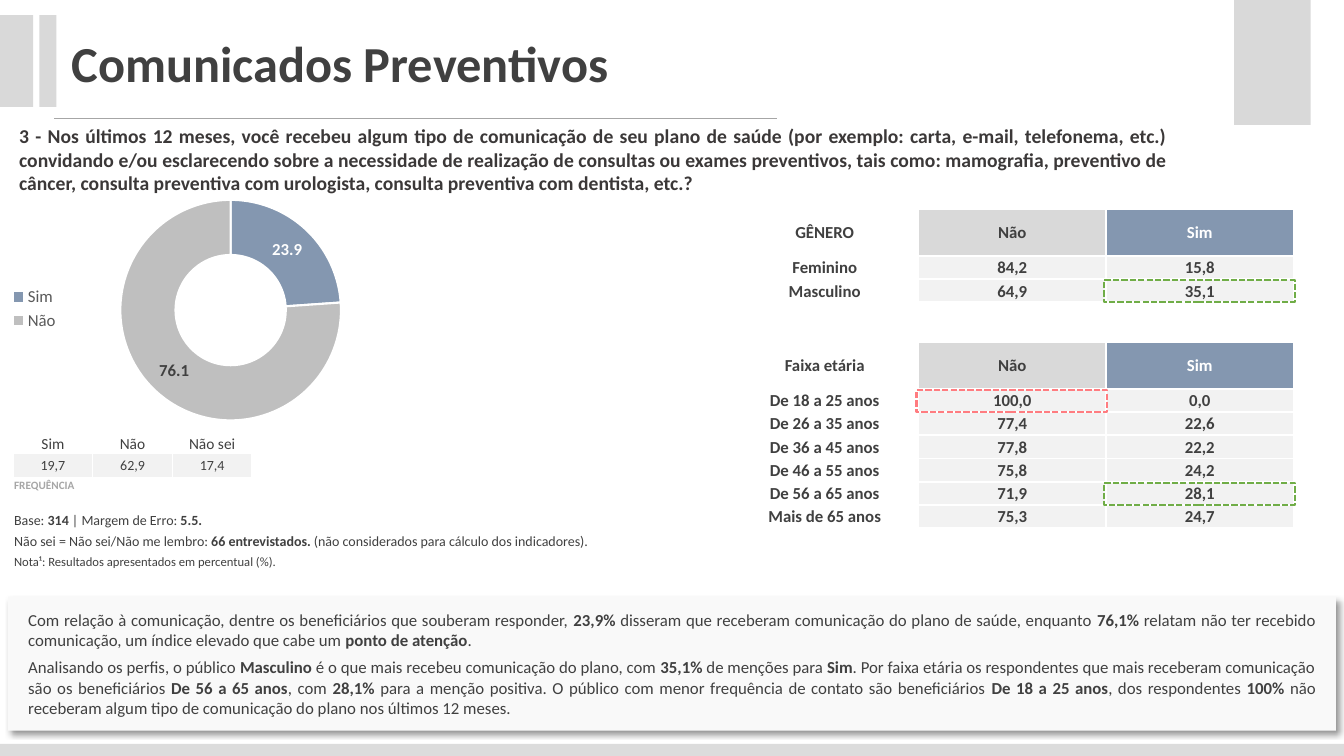
from lxml import etree
from pptx import Presentation
from pptx.chart.data import CategoryChartData
from pptx.dml.color import RGBColor
from pptx.enum.chart import XL_CHART_TYPE, XL_LEGEND_POSITION
from pptx.enum.dml import MSO_LINE
from pptx.enum.shapes import MSO_CONNECTOR, MSO_SHAPE
from pptx.enum.text import MSO_ANCHOR, PP_ALIGN
from pptx.oxml.ns import qn
from pptx.util import Inches, Pt

RECT = MSO_SHAPE.RECTANGLE
LEFT, MID, JUST = PP_ALIGN.LEFT, PP_ALIGN.CENTER, PP_ALIGN.JUSTIFY
TOP, CENTER, BOTTOM = MSO_ANCHOR.TOP, MSO_ANCHOR.MIDDLE, MSO_ANCHOR.BOTTOM

TITLE = "Comunicados Preventivos"
ASK = (
    "3 - Nos últimos 12 meses, você recebeu algum tipo de comunicação de seu plano de saúde "
    "(por exemplo: carta, e-mail, telefonema, etc.) convidando e/ou esclarecendo sobre a "
    "necessidade de realização de consultas ou exames preventivos, tais como: mamografia, "
    "preventivo de câncer, consulta preventiva com urologista, consulta preventiva com "
    "dentista, etc.?"
)
SHARE = [("Sim", 23.9), ("Não", 76.1)]
PROFILE = [
    ("GÊNERO", "Não", "Sim"),
    ("Feminino", "84,2", "15,8"),
    ("Masculino", "64,9", "35,1"),
    None,
    ("Faixa etária", "Não", "Sim"),
    ("De 18 a 25 anos", "100,0", "0,0"),
    ("De 26 a 35 anos", "77,4", "22,6"),
    ("De 36 a 45 anos", "77,8", "22,2"),
    ("De 46 a 55 anos", "75,8", "24,2"),
    ("De 56 a 65 anos", "71,9", "28,1"),
    ("Mais de 65 anos", "75,3", "24,7"),
]
HEADS, GAP = (0, 4), 3
MARKS = [(5, 1, "low"), (9, 2, "high"), (2, 2, "high")]
COUNTS = [("Sim", "Não", "Não sei"), ("19,7", "62,9", "17,4")]
COUNT_TAG = "FREQUÊNCIA"
NOTES = [
    ("Base: **314** | Margem de Erro: **5.5.**", "small"),
    ("Não sei = Não sei/Não me lembro: **66 entrevistados.** "
     "(não considerados para cálculo dos indicadores).", "small"),
    ("Nota¹: Resultados apresentados em percentual (%).", "note"),
]
FINDINGS = [
    "Com relação à comunicação, dentre os beneficiários que souberam responder, **23,9%** "
    "disseram que receberam comunicação do plano de saúde, enquanto **76,1%** relatam não ter "
    "recebido comunicação, um índice elevado que cabe um **ponto de atenção**.",
    "Analisando os perfis, o público** Masculino** é o que mais recebeu comunicação do plano, "
    "com **35,1% **de menções para **Sim**. Por faixa etária os respondentes que mais receberam "
    "comunicação são os beneficiários **De 56 a 65 anos**, com **28,1% **para a menção positiva. "
    "O público com menor frequência de contato são beneficiários **De 18 a 25 anos**, dos "
    "respondentes **100% **não receberam algum tipo de comunicação do plano nos últimos 12 meses.",
]
BLOCKS = [
    (0, 7.38, 13.33, 0.12, "foot"),
    (0, 0.15, 0.33, 0.91, "head"),
    (0.39, 0.15, 0.17, 0.91, "head"),
    (12.24, 0, 0.76, 1.24, "head"),
]
THEME = {
    "font": "Calibri",
    "color": {
        "text": "404040", "ask": "3B3838", "white": "FFFFFF", "head": "D9D9D9", "foot": "DCDCDC",
        "yes": "8497B0", "no": "BFBFBF", "cell": "F2F2F2", "muted": "A6A6A6", "panel": "F9F9F9",
        "legend": "595959", "low": "FF7C80", "high": "70AD47",
    },
    "size": {"title": 36, "ask": 14, "body": 12, "count": 11, "small": 10, "note": 9, "tag": 8},
}

deck = Presentation()
deck.slide_width, deck.slide_height = Inches(13.33), Inches(7.5)
slide = deck.slides.add_slide(deck.slide_layouts[6])
shapes = slide.shapes


def rgb(name):
    return RGBColor.from_string(THEME["color"][name])


def style(font, size, color="text", bold=None):
    font.name, font.size, font.bold = THEME["font"], Pt(THEME["size"][size]), bold
    font.color.rgb = rgb(color)


def write(par, text, size, color="text", bold=None, align=LEFT):
    for i, part in enumerate(text.split("**")):
        if part:
            run = par.add_run()
            run.text = part
            if i % 2:
                run.font.bold = True
    style(par.font, size, color, bold)
    par.alignment = align


def inset(frame, x, y):
    frame.margin_left = frame.margin_right = Inches(x)
    frame.margin_top = frame.margin_bottom = Inches(y)
    frame.word_wrap = True


def block(x, y, w, h, fill=None):
    box = shapes.add_shape(RECT, Inches(x), Inches(y), Inches(w), Inches(h))
    box.shadow.inherit = False
    box.line.fill.background()
    if fill:
        box.fill.solid()
        box.fill.fore_color.rgb = rgb(fill)
    else:
        box.fill.background()
    return box


def label(x, y, w, h, pad, text, **look):
    frame = shapes.add_textbox(Inches(x), Inches(y), Inches(w), Inches(h)).text_frame
    inset(frame, *pad)
    write(frame.paragraphs[0], text, **look)


def grid(x, y, cols, rows):
    frame = shapes.add_table(len(rows), len(cols), Inches(x), Inches(y),
                             Inches(sum(cols)), Inches(sum(rows)))
    table = frame.table
    table.first_row = table.horz_banding = False
    for col, size in zip(table.columns, cols):
        col.width = Inches(size)
    for row, size in zip(table.rows, rows):
        row.height = Inches(size)
    for cell in table.iter_cells():
        cell.margin_left = cell.margin_right = cell.margin_top = Inches(0.01)
        cell.margin_bottom = 0
        cell.fill.background()
    return table


def put(cell, text, size, fill=None, anchor=CENTER, **look):
    cell.vertical_anchor = anchor
    write(cell.text_frame.paragraphs[0], text, size, **look)
    if fill:
        cell.fill.solid()
        cell.fill.fore_color.rgb = rgb(fill)


def rule(table, width):
    for cell in table.iter_cells():
        props = cell._tc.get_or_add_tcPr()
        for i, side in enumerate(("a:lnL", "a:lnR", "a:lnT", "a:lnB")):
            line = etree.Element(qn(side), w=str(Pt(width)))
            paint = etree.SubElement(line, qn("a:solidFill"))
            etree.SubElement(paint, qn("a:srgbClr"), val=THEME["color"]["white"])
            props.insert(i, line)


for part in BLOCKS:
    block(*part)
line = shapes.add_connector(MSO_CONNECTOR.STRAIGHT, Inches(0.54), Inches(1.17),
                            Inches(7.71), Inches(1.17))
line.line.color.rgb, line.line.width = rgb("muted"), Pt(0.5)
etree.SubElement(line._element.spPr, qn("a:effectLst"))

label(0.08, 1.17, 11.61, 0.82, (0.11, 0.06), ASK, size="ask", color="ask", bold=True, align=JUST)
label(0.61, 0.27, 5.81, 0.71, (0.1, 0.05), TITLE, size="title", bold=True)

left, top, wide = 7.25, 2.07, 1.86
tall = [0.47 if i in HEADS else 0.39 if i == GAP else 0.23 for i in range(len(PROFILE))]
table = grid(left, top, [wide] * 3, tall)
for r, row in enumerate(PROFILE):
    if row is None:
        table.cell(r, 0).merge(table.cell(r, 2))
        continue
    fills = (None, "head", "yes") if r in HEADS else (None, "cell", "cell")
    for c, (text, fill) in enumerate(zip(row, fills)):
        color = "white" if fill == "yes" else "text"
        put(table.cell(r, c), text, "body", fill, color=color, bold=True, align=MID)
rule(table, 1.5)

table = grid(0.13, 4.3, [0.79] * 3, [0.2, 0.24, 0.24])
looks = [("count", None, BOTTOM), ("small", "cell", CENTER)]
for r, (row, look) in enumerate(zip(COUNTS, looks)):
    for c, text in enumerate(row):
        put(table.cell(r, c), text, *look, align=MID)
table.cell(2, 0).merge(table.cell(2, 2))
put(table.cell(2, 0), COUNT_TAG, "tag", anchor=TOP, color="muted", bold=True)
rule(table, 1)

table = grid(0.13, 5.07, [7.09], [0.21] * 3)
for r, (text, size) in enumerate(NOTES):
    put(table.cell(r, 0), text, size, anchor=TOP)

panel = block(0.08, 5.92, 13.17, 1.33, "panel")
effects = panel._element.spPr.find(qn("a:effectLst"))
shade = etree.SubElement(effects, qn("a:outerShdw"), blurRad=str(Pt(4)), dist=str(Pt(3)),
                         dir="2700000", algn="tl", rotWithShape="0")
tint = etree.SubElement(shade, qn("a:srgbClr"), val="000000")
etree.SubElement(tint, qn("a:alpha"), val="40000")
frame = panel.text_frame
inset(frame, 0.2, 0.04)
frame.vertical_anchor = CENTER
for i, text in enumerate(FINDINGS):
    par = frame.add_paragraph() if i else frame.paragraphs[0]
    write(par, text, "body", align=JUST)
    if i:
        par.space_before = Pt(5)

for r, c, color in MARKS:
    mark = block(left + c * wide - 0.02, top + sum(tall[:r]) + 0.01, 1.89, 0.22)
    mark.line.color.rgb, mark.line.width = rgb(color), Pt(1.5)
    mark.line.dash_style = MSO_LINE.SQUARE_DOT

data = CategoryChartData(number_format="0.0")
data.categories = [name for name, _ in SHARE]
data.add_series("Series 1", [value for _, value in SHARE])
chart = shapes.add_chart(XL_CHART_TYPE.DOUGHNUT, Inches(0), Inches(1.82),
                         Inches(3.98), Inches(2.49), data).chart
style(chart.font, "small")
chart.has_title = False
chart.has_legend = True
chart.legend.position = XL_LEGEND_POSITION.LEFT
chart.legend.include_in_layout = False
style(chart.legend.font, "body", "legend")
plot = chart.plots[0]
plot.has_data_labels = True
tags = plot.data_labels
tags.show_value, tags.show_percentage = True, False
tags.number_format, tags.number_format_is_linked = "0.0", False
style(tags.font, "body", "white", True)
for i, color in enumerate(("yes", "no")):
    point = plot.series[0].points[i]
    point.format.fill.solid()
    point.format.fill.fore_color.rgb = rgb(color)
    point.format.line.color.rgb, point.format.line.width = rgb("white"), Pt(1.5)
    style(point.data_label.font, "body", "text" if i else "white", True)
area = chart._chartSpace.chart.plotArea
for old in area.findall(qn("c:layout")):
    area.remove(old)
layout = etree.Element(qn("c:layout"))
place = etree.SubElement(layout, qn("c:manualLayout"))
for key, val in (("layoutTarget", "inner"), ("xMode", "edge"), ("yMode", "edge"),
                 ("x", "0.3"), ("y", "0.06"), ("w", "0.55"), ("h", "0.89")):
    etree.SubElement(place, qn("c:" + key), val=val)
area.insert(0, layout)

deck.save("out.pptx")
